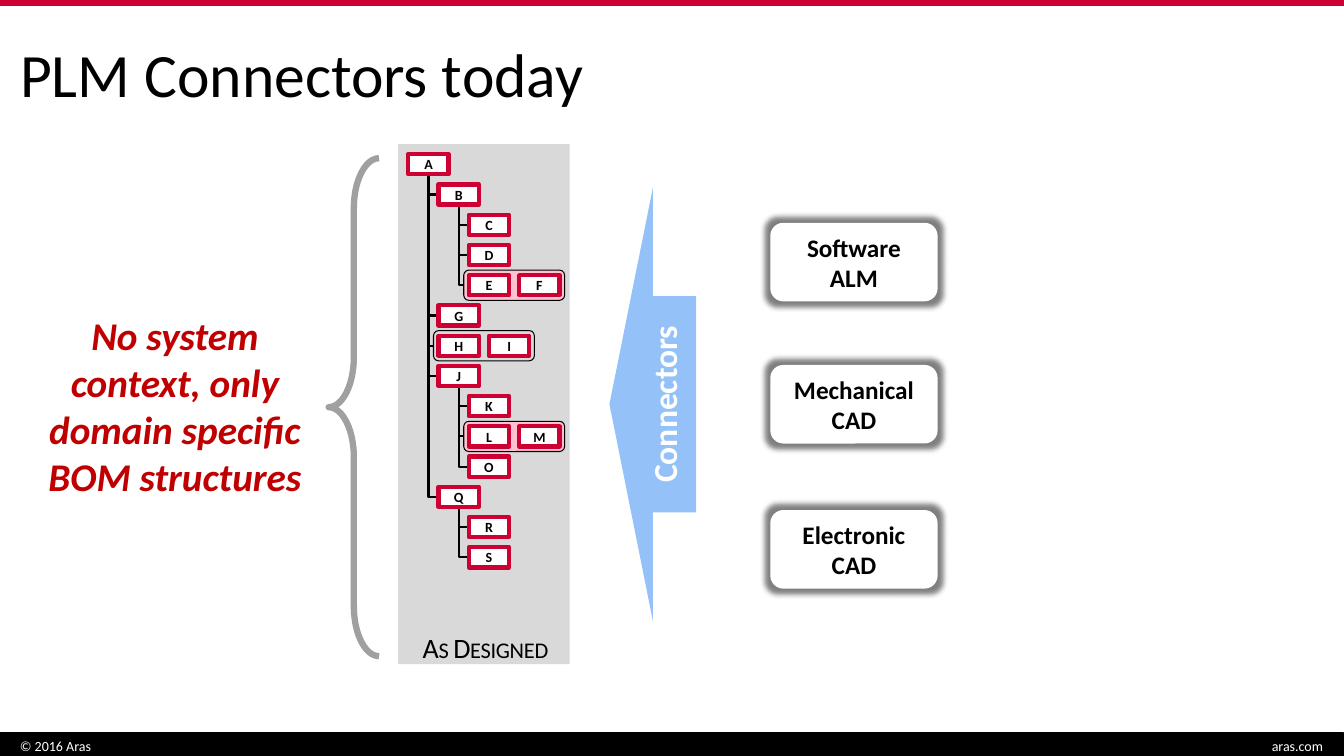
from lxml import etree
from pptx import Presentation
from pptx import util as u
from pptx.dml.color import RGBColor
from pptx.enum import shapes, text
from pptx.oxml import ns

PX = 9144  # 100 px to the inch
FONT = "Calibri"
BLACK = RGBColor(0x00, 0x00, 0x00)
WHITE = RGBColor(0xFF, 0xFF, 0xFF)
RED = RGBColor(0xCC, 0x00, 0x33)
DARK = RGBColor(0xC0, 0x00, 0x00)
PINK = RGBColor(0xFF, 0xC2, 0xD1)
PALE = RGBColor(0xD9, 0xD9, 0xD9)
GRAY = RGBColor(0xA0, 0xA0, 0xA0)
BLUE = RGBColor(0x94, 0xC1, 0xF7)

KIND = shapes.MSO_SHAPE
ALIGN = text.PP_ALIGN
MID = text.MSO_ANCHOR.MIDDLE
TOP = text.MSO_ANCHOR.TOP
LOW = text.MSO_ANCHOR.BOTTOM

# Tree grid: left and top of the root, box size, steps
LEFT, HEAD, WIDE, TALL = 405, 153, 40, 20
STEP, PAIR, EDGE = 30, 50, 5

# Rows of the tree: depth, labels, fill of the frame around a pair
ROWS = [
    (0, "A", None), (1, "B", None), (2, "C", None), (2, "D", None),
    (2, "EF", PINK), (1, "G", None), (1, "HI", None), (1, "J", None),
    (2, "K", None), (2, "LM", PINK), (2, "O", None), (1, "Q", None),
    (2, "R", None), (2, "S", None),
]

CARDS = [(221, "Software ALM"), (362, "Mechanical CAD"), (506, "Electronic CAD")]


def px(*nums):
    return [u.Emu(int(n * PX)) for n in nums]


def write(item, words, size, color=BLACK, bold=False, slant=False,
          align=ALIGN.CENTER, anchor=MID, wrap=True, pad=(10, 5, 10, 5),
          lead=None, caps=False):
    frame = item.text_frame
    frame.word_wrap = wrap
    frame.vertical_anchor = anchor
    (frame.margin_left, frame.margin_top,
     frame.margin_right, frame.margin_bottom) = px(*pad)
    para = frame.paragraphs[0]
    para.alignment = align
    if lead:
        para.line_spacing = lead
    run = para.add_run()
    run.text = words
    font = run.font
    font.name, font.size = FONT, u.Pt(size)
    font.bold, font.italic = bold, slant
    font.color.rgb = color
    if caps:
        props = run._r.get_or_add_rPr()
        props.set("cap", "small")
        props.set("spc", "-20")


def label(slide, box, words, size, **style):
    write(slide.shapes.add_textbox(*px(*box)), words, size, **style)


def block(slide, kind, box, fill=None, line=None, width=0.85):
    item = slide.shapes.add_shape(kind, *px(*box))
    item.shadow.inherit = False
    if fill is None:
        item.fill.background()
    else:
        item.fill.solid()
        item.fill.fore_color.rgb = fill
    if line is None:
        item.line.fill.background()
    else:
        item.line.color.rgb = line
        item.line.width = u.Pt(width)
    return item


def elbow(slide, x1, y1, x2, y2):
    """Draw down from the start, then right to the end."""
    midx, midy = (x1 + x2) / 2, (y1 + y2) / 2
    dx, dy = (x2 - x1) / 2, (y2 - y1) / 2
    # A quarter turn swaps the two half lengths
    link = slide.shapes.add_connector(
        shapes.MSO_CONNECTOR.ELBOW,
        *px(midx + dy, midy - dx, midx - dy, midy + dx))
    link.line.color.rgb = BLACK
    link.line.width = u.Pt(1.5)
    props = link._element.spPr
    props.find(ns.qn("a:xfrm")).set("rot", "16200000")
    props.find(ns.qn("a:prstGeom")).set("prst", "bentConnector2")
    etree.SubElement(props, ns.qn("a:effectLst"))


def glow(item, size, color):
    effect = item._element.spPr.find(ns.qn("a:effectLst"))
    halo = etree.SubElement(effect, ns.qn("a:glow"), rad=str(u.Pt(size)))
    etree.SubElement(halo, ns.qn("a:srgbClr"), val=color)


def node(slide, x, y, name):
    item = block(slide, KIND.RECTANGLE, (x, y, WIDE, TALL), WHITE, RED, 3)
    write(item, name, 10, bold=True, wrap=False)


def tree(slide):
    # Links from each parent to its rows
    last = {}
    for row, (depth, names, _) in enumerate(ROWS):
        x, y = LEFT + depth * STEP, HEAD + row * STEP
        last[depth] = (x + WIDE / 2, y + TALL)
        if depth:
            end = x - EDGE if len(names) > 1 else x
            elbow(slide, *last[depth - 1], end, y + TALL / 2)
    # Frames and boxes
    for row, (depth, names, fill) in enumerate(ROWS):
        x, y = LEFT + depth * STEP, HEAD + row * STEP
        if len(names) > 1:
            box = (x - EDGE, y - EDGE, PAIR * len(names), TALL + 2 * EDGE)
            block(slide, KIND.ROUNDED_RECTANGLE, box, fill, BLACK, 0.75)
        for col, name in enumerate(names):
            node(slide, x + col * PAIR, y, name)


def main():
    prs = Presentation()
    prs.slide_width, prs.slide_height = px(1333, 750)
    slide = prs.slides.add_slide(prs.slide_layouts[6])

    # Bars, footer and title
    block(slide, KIND.RECTANGLE, (-1, 727, 1333, 25), BLACK, BLACK)
    block(slide, KIND.RECTANGLE, (0, 0, 1333, 5), RED, RED)
    label(slide, (10, 727, 410, 25), "© 2016 Aras", 10, color=WHITE,
          align=ALIGN.LEFT)
    label(slide, (911, 727, 411, 25), "aras.com", 10, color=WHITE,
          align=ALIGN.RIGHT)
    label(slide, (0, 0, 981, 153), "PLM Connectors today", 44,
          align=ALIGN.LEFT, pad=(20, 5, 10, 5), lead=0.9)

    # Panel with the structure
    panel = block(slide, KIND.RECTANGLE, (395, 143, 170, 516), PALE)
    write(panel, "As Designed", 20, anchor=LOW, pad=(0, 0, 0, 0), caps=True)
    tree(slide)

    # Arrow
    arrow = block(slide, KIND.UP_ARROW, (433, 358, 429, 86), BLUE)
    arrow.rotation = 270
    write(arrow, "Connectors", 24, color=WHITE, bold=True)

    # Tool cards
    for y, name in CARDS:
        card = block(slide, KIND.ROUNDED_RECTANGLE, (764, y, 166, 78), WHITE)
        glow(card, 8, "808080")
        write(card, name, 18, bold=True)

    # Brace and remark
    brace = block(slide, KIND.LEFT_BRACE, (326, 157, 50, 494), None, GRAY, 4.5)
    brace.adjustments[0] = 0.995
    label(slide, (22, 304, 303, 199),
          "No system context, only domain specific BOM structures", 28,
          color=DARK, bold=True, slant=True, anchor=TOP)

    prs.save("out.pptx")


if __name__ == "__main__":
    main()
